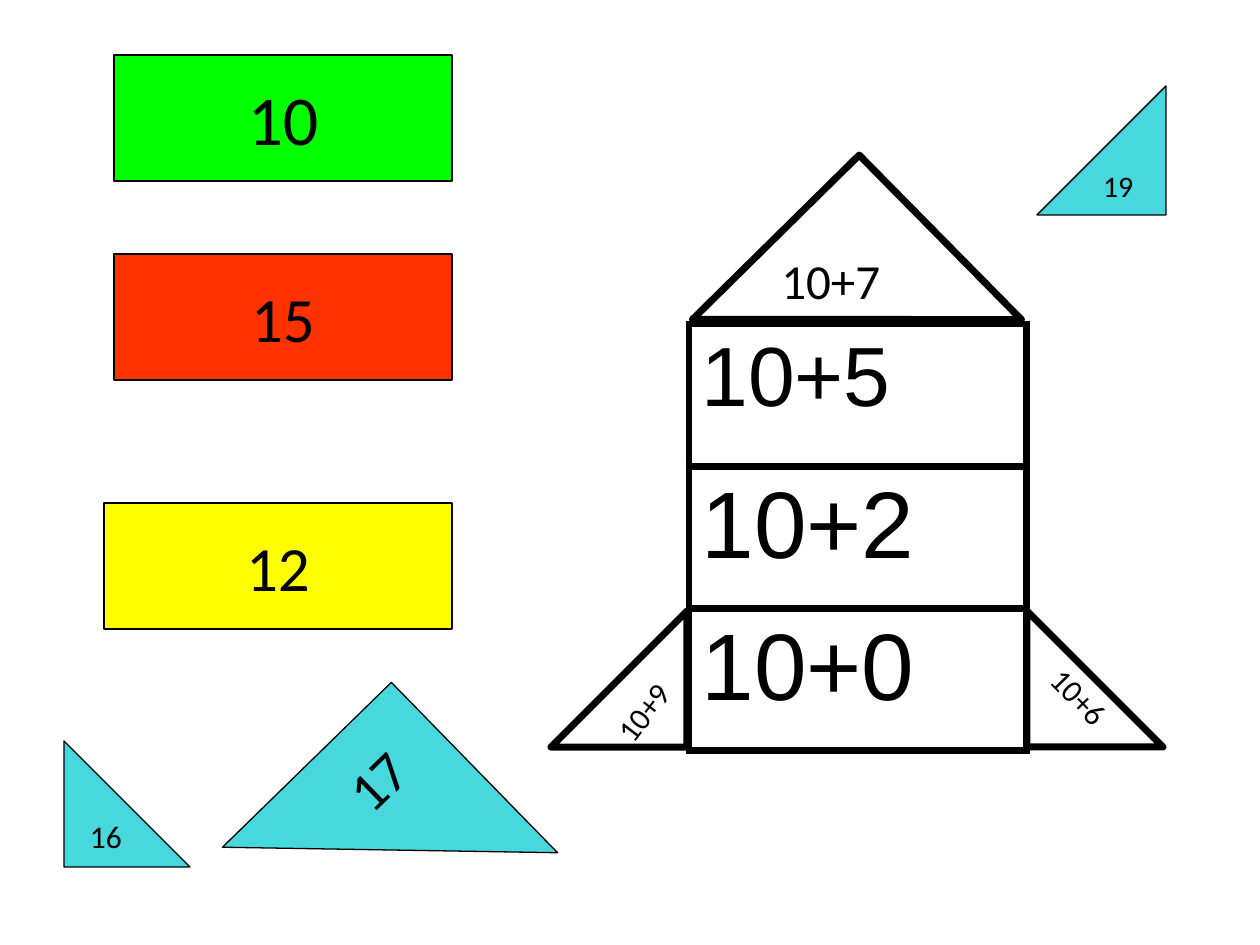
"""Build a slide with a sum rocket and the matching answer pieces."""
from lxml import etree
from pptx import Presentation
from pptx import util as u
from pptx.dml.color import RGBColor
from pptx.enum import shapes, text
from pptx.oxml.ns import qn

PX = 914400 / 126
BLACK = RGBColor(0x00, 0x00, 0x00)
GREEN = RGBColor(0x00, 0xFF, 0x00)
RED = RGBColor(0xFF, 0x33, 0x00)
YELLOW = RGBColor(0xFF, 0xFF, 0x00)
TEAL = RGBColor(0x46, 0xD8, 0xDC)
RECTANGLE = shapes.MSO_SHAPE.RECTANGLE
TRIANGLE = shapes.MSO_SHAPE.RIGHT_TRIANGLE


def px(*lengths):
    return [u.Emu(round(length * PX)) for length in lengths]


def write(frame, words, size, font="Calibri", align=None):
    para = frame.paragraphs[0]
    para.alignment = align
    span = para.add_run()
    span.text = words
    span.font.size = u.Pt(size)
    span.font.name = font
    span.font.color.rgb = BLACK


def add_label(page, at, words, size, turn=0, wrap=False):
    box = page.shapes.add_textbox(*px(*at))
    box.rotation = turn
    box.text_frame.word_wrap = wrap
    box.text_frame.auto_size = text.MSO_AUTO_SIZE.SHAPE_TO_FIT_TEXT
    write(box.text_frame, words, size)


def add_piece(page, kind, at, fill=None, line=0.75, turn=0):
    piece = page.shapes.add_shape(kind, *px(*at))
    piece.shadow.inherit = False
    piece.rotation = turn
    if fill is None:
        piece.fill.background()
    else:
        piece.fill.solid()
        piece.fill.fore_color.rgb = fill
    piece.line.color.rgb = BLACK
    piece.line.width = u.Pt(line)
    return piece


def add_answer(page, kind, at, fill, words, size, turn=0):
    piece = add_piece(page, kind, at, fill, turn=turn)
    frame = piece.text_frame
    frame.word_wrap = False
    frame.vertical_anchor = text.MSO_ANCHOR.MIDDLE
    write(frame, words, size, align=text.PP_ALIGN.CENTER)
    return piece


def add_corner_answer(page, at, words, size):
    piece = add_piece(page, TRIANGLE, at, TEAL)
    piece._element.spPr.find(qn("a:xfrm")).set("flipH", "1")
    piece.text_frame.word_wrap = True
    piece.text_frame.vertical_anchor = text.MSO_ANCHOR.TOP
    write(piece.text_frame, words, size, align=text.PP_ALIGN.LEFT)


def add_borders(cell, width):
    props = cell._tc.get_or_add_tcPr()
    for place, side in enumerate(("lnL", "lnR", "lnT", "lnB")):
        line = etree.Element(qn(f"a:{side}"), w=str(u.Pt(width)))
        fill = etree.SubElement(line, qn("a:solidFill"))
        etree.SubElement(fill, qn("a:srgbClr"), val=str(BLACK))
        props.insert(place, line)


def add_tower(page, at, floors):
    table = page.shapes.add_table(len(floors), 1, *px(*at)).table
    table.first_row = table.horz_banding = False
    for row, (words, size) in enumerate(floors):
        cell = table.cell(row, 0)
        cell.fill.background()
        write(cell.text_frame, words, size, "Arial")
        add_borders(cell, 4.5)


def main():
    deck = Presentation()
    deck.slide_width, deck.slide_height = px(1260, 945)
    page = deck.slides.add_slide(deck.slide_layouts[6])

    add_label(page, (597, 684, 96, 50), "10+9", 18, 307.4)
    add_label(page, (1034, 674, 96, 50), "10+6", 18, 45.7)
    add_label(page, (769, 244, 159, 72), "10+7", 28, wrap=True)
    add_tower(page, (689, 324, 338, 427),
              [("10+5", 48), ("10+2", 54), ("10+0", 54)])
    for at, turn in (((1027, 611, 136, 136), 0),
                     ((551, 611, 136, 136), 270),
                     ((740, 204, 234, 231), 135.4)):
        add_piece(page, TRIANGLE, at, line=4, turn=turn)

    for at, fill, words, size in (((114, 55, 338, 126), GREEN, "10", 40),
                                  ((114, 254, 338, 126), RED, "15", 36),
                                  ((104, 503, 348, 126), YELLOW, "12", 36)):
        add_answer(page, RECTANGLE, at, fill, words, size)
    add_answer(page, TRIANGLE, (64, 741, 126, 126), TEAL, "16", 18)
    add_corner_answer(page, (1037, 86, 129, 129), "19", 17)
    nose = add_answer(page, TRIANGLE, (272, 731, 236, 238), TEAL, "17", 32, 135.7)
    nose.text_frame._txBody.bodyPr.set("rot", str(180 * 60000))

    deck.save("out.pptx")


if __name__ == "__main__":
    main()
